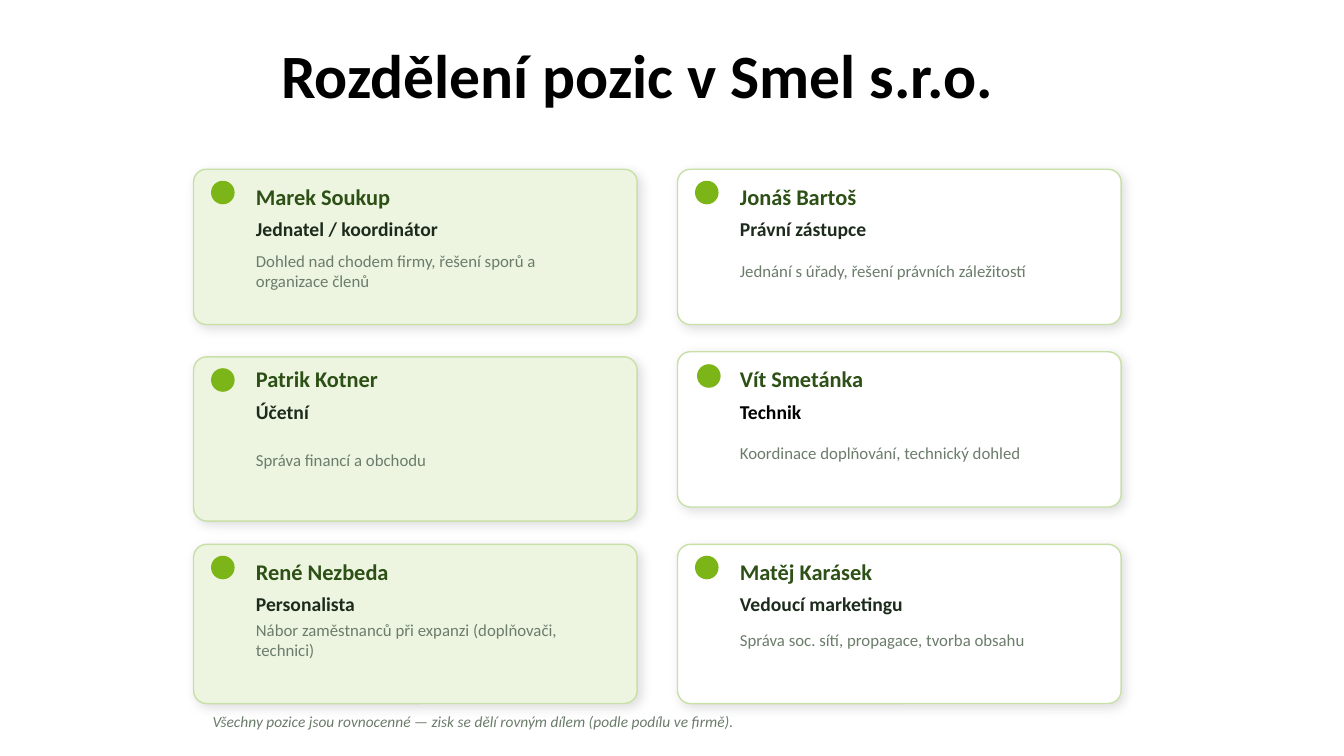
from dataclasses import dataclass

from lxml import etree
from pptx import Presentation
from pptx.dml.color import RGBColor
from pptx.enum.shapes import MSO_SHAPE
from pptx.enum.text import MSO_ANCHOR, PP_ALIGN
from pptx.oxml import parse_xml
from pptx.oxml.ns import nsdecls
from pptx.shapes.autoshape import Shape
from pptx.slide import Slide
from pptx.util import Inches, Pt

FONT = "Calibri"
LIGHT_GREEN, WHITE, BORDER = "EDF5E1", "FFFFFF", "C8E0A8"
DOT_GREEN, NAME_GREEN = "7CB518", "2D5016"
ROLE_DARK, MUTED, BLACK = "1C2B1C", "6B7C6B", "000000"

COLUMN_LEFTS = (1.92, 6.72)
COLUMN_FILLS = (LIGHT_GREEN, WHITE)
NAME_TOPS = (1.76, 3.57, 5.48)
CARD_W, DOT_SIZE, TEXT_W = 4.4, 0.22, 3.7


@dataclass(frozen=True)
class Position:
    name: str
    role: str
    duty: str
    col: int
    row: int
    top: float
    height: float
    duty_height: float
    role_color: str = ROLE_DARK
    dot_dx: float = 0.18
    dot_dy: float = 0.12


POSITIONS = (
    Position("Marek Soukup", "Jednatel / koordinátor",
             "Dohled nad chodem firmy, řešení sporů a organizace členů",
             0, 0, 1.68, 1.54, 0.58),
    Position("Jonáš Bartoš", "Právní zástupce",
             "Jednání s úřady, řešení právních záležitostí",
             1, 0, 1.68, 1.54, 0.58),
    Position("Patrik Kotner", "Účetní", "Správa financí a obchodu",
             0, 1, 3.54, 1.63, 0.70),
    Position("Vít Smetánka", "Technik",
             "Koordinace doplňování, technický dohled",
             1, 1, 3.49, 1.54, 0.56, BLACK, 0.2, 0.13),
    Position("René Nezbeda", "Personalista",
             "Nábor zaměstnanců při expanzi (doplňovači, technici)",
             0, 2, 5.4, 1.58, 0.46),
    Position("Matěj Karásek", "Vedoucí marketingu",
             "Správa soc. sítí, propagace, tvorba obsahu",
             1, 2, 5.4, 1.58, 0.46),
)


def rgb(color: str) -> RGBColor:
    return RGBColor.from_string(color)


def add_text(s: Slide, text: str, left: float, top: float, width: float,
             height: float, *, size: float, color: str, bold: bool = False,
             italic: bool = False, align: PP_ALIGN = PP_ALIGN.LEFT,
             anchor: MSO_ANCHOR = MSO_ANCHOR.MIDDLE) -> None:
    box = s.shapes.add_textbox(Inches(left), Inches(top),
                               Inches(width), Inches(height))
    tf = box.text_frame
    tf.word_wrap = True
    tf.vertical_anchor = anchor
    p = tf.paragraphs[0]
    p.alignment = align
    r = p.add_run()
    r.text = text
    r.font.name = FONT
    r.font.size = Pt(size)
    r.font.bold = bold
    r.font.italic = italic
    r.font.color.rgb = rgb(color)


def add_filled(s: Slide, kind: MSO_SHAPE, left: float, top: float,
               width: float, height: float, fill: str, line: str) -> Shape:
    sp = s.shapes.add_shape(kind, Inches(left), Inches(top),
                            Inches(width), Inches(height))
    sp.shadow.inherit = False
    sp.fill.solid()
    sp.fill.fore_color.rgb = rgb(fill)
    sp.line.color.rgb = rgb(line)
    sp.line.width = Pt(1)
    return sp


def add_soft_shadow(sp: Shape) -> None:
    """Fill the shape's empty effect list with a faint lower-right shadow."""
    effects: etree._Element = sp.element.spPr.find(
        "{http://schemas.openxmlformats.org/drawingml/2006/main}effectLst")
    effects.append(parse_xml(
        f'<a:outerShdw {nsdecls("a")} blurRad="{Pt(8)}" dist="{Pt(3)}" '
        f'dir="{45 * 60000}" algn="bl" rotWithShape="0">'
        f'<a:srgbClr val="{BLACK}"><a:alpha val="13000"/></a:srgbClr>'
        '</a:outerShdw>'))


def add_position(s: Slide, pos: Position) -> None:
    left = COLUMN_LEFTS[pos.col]
    card = add_filled(s, MSO_SHAPE.ROUNDED_RECTANGLE, left, pos.top, CARD_W,
                      pos.height, COLUMN_FILLS[pos.col], BORDER)
    card.adjustments[0] = 0.082
    add_soft_shadow(card)
    add_filled(s, MSO_SHAPE.OVAL, left + pos.dot_dx, pos.top + pos.dot_dy,
               DOT_SIZE, DOT_SIZE, DOT_GREEN, DOT_GREEN)

    text_left, name_top = left + 0.52, NAME_TOPS[pos.row]
    add_text(s, pos.name, text_left, name_top, TEXT_W, 0.38,
             size=16, color=NAME_GREEN, bold=True)
    add_text(s, pos.role, text_left, name_top + 0.36, TEXT_W, 0.3,
             size=14, color=pos.role_color, bold=True)
    add_text(s, pos.duty, text_left, name_top + 0.64, TEXT_W,
             pos.duty_height, size=12, color=MUTED)


def main() -> None:
    prs = Presentation()
    prs.slide_width, prs.slide_height = Inches(13.33), Inches(7.5)
    s = prs.slides.add_slide(prs.slide_layouts[6])
    for pos in POSITIONS:
        add_position(s, pos)
    add_text(s, "Všechny pozice jsou rovnocenné — zisk se dělí rovným dílem "
             "(podle podílu ve firmě).", 2.01, 6.98, 9, 0.35,
             size=11, color=MUTED, italic=True)
    add_text(s, "Rozdělení pozic v Smel s.r.o.", 2.52, 0.32, 7.61, 0.84,
             size=44, color=BLACK, bold=True, align=PP_ALIGN.CENTER,
             anchor=MSO_ANCHOR.TOP)
    prs.save("out.pptx")


if __name__ == "__main__":
    main()
